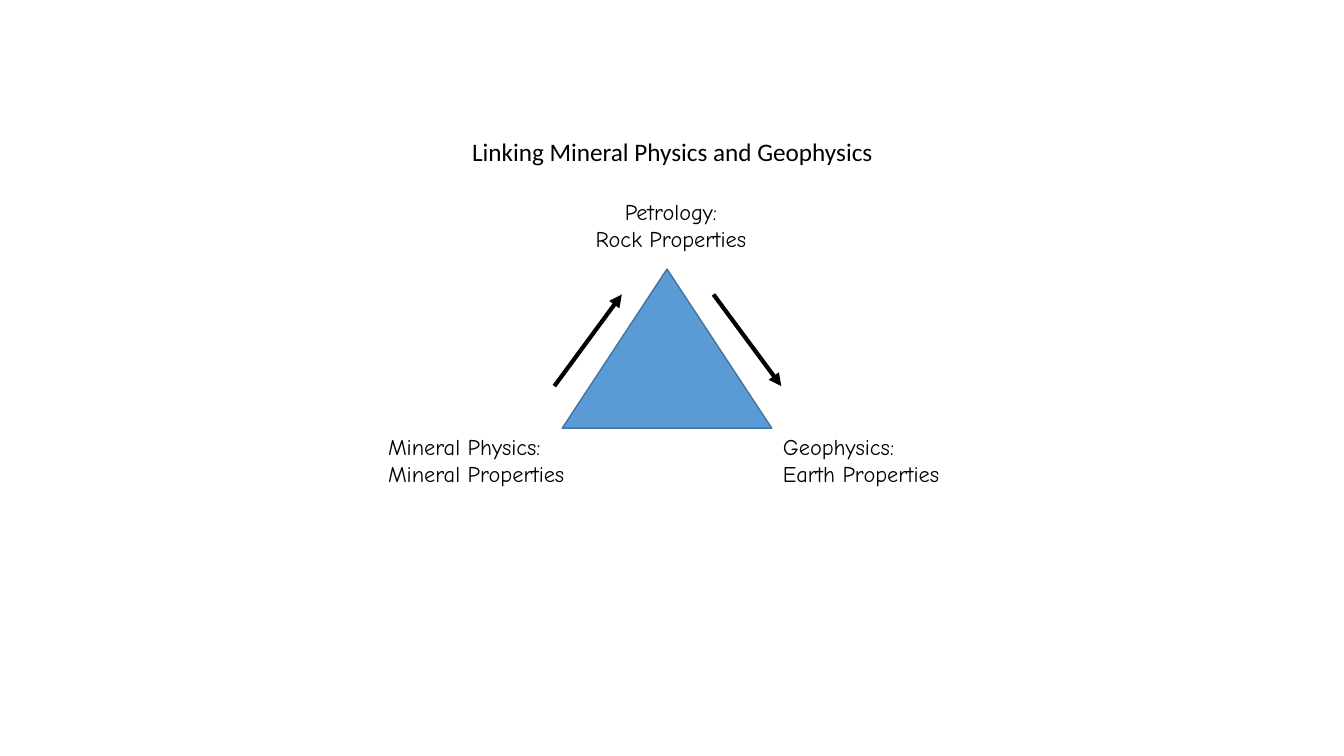
from dataclasses import dataclass

from lxml.etree import SubElement
from pptx import Presentation
from pptx.dml.color import RGBColor
from pptx.enum.shapes import MSO_CONNECTOR as Connector, MSO_SHAPE as Preset
from pptx.enum.text import MSO_ANCHOR as Anchor, MSO_AUTO_SIZE as AutoSize, PP_ALIGN as Align
from pptx.oxml.ns import qn
from pptx.slide import Slide
from pptx.util import Cm, Pt


@dataclass(frozen=True)
class Theme:
    ink: RGBColor = RGBColor(0x00, 0x00, 0x00)
    fill: RGBColor = RGBColor(0x5B, 0x9B, 0xD5)
    edge: RGBColor = RGBColor(0x43, 0x73, 0x9E)
    title_font: str = "Calibri"
    label_font: str = "Comic Neue"
    title_size: Pt = Pt(18)
    label_size: Pt = Pt(16)
    edge_width: Pt = Pt(1)
    arrow_width: Pt = Pt(3)


@dataclass(frozen=True)
class Label:
    lines: tuple[str, str]
    left: float
    top: float
    width: float
    align: Align = Align.LEFT


@dataclass(frozen=True)
class Arrow:
    start: tuple[float, float]
    end: tuple[float, float]


THEME = Theme()
LABEL_HEIGHT = 1.63
BASE_TOP = 10.8
ARROW_TOP, ARROW_BOTTOM = 7.42, 9.73

LABELS = (
    Label(("Mineral Physics:", "Mineral Properties"), 9.53, BASE_TOP, 5.46),
    Label(("Petrology:", "Rock Properties"), 14.55, 4.88, 4.72, Align.CENTER),
    Label(("Geophysics:", "Earth Properties"), 19.48, BASE_TOP, 4.98),
)
ARROWS = (
    Arrow((13.97, ARROW_BOTTOM), (15.67, ARROW_TOP)),
    Arrow((17.98, ARROW_TOP), (19.69, ARROW_BOTTOM)),
)


def set_title(page: Slide, text: str) -> None:
    title = page.shapes.title
    title.left, title.top, title.width, title.height = Cm(6.15), Cm(2.11), Cm(21.59), Cm(4.09)
    frame = title.text_frame
    frame.text = text
    frame.auto_size = AutoSize.NONE
    frame.vertical_anchor = Anchor.MIDDLE
    frame.margin_bottom = Cm(0.8)
    para = frame.paragraphs[0]
    para.alignment = Align.CENTER
    para.font.name = THEME.title_font
    para.font.size = THEME.title_size
    para.font.color.rgb = THEME.ink


def add_triangle(page: Slide) -> None:
    triangle = page.shapes.add_shape(
        Preset.ISOSCELES_TRIANGLE, Cm(14.17), Cm(6.78), Cm(5.28), Cm(4.01))
    triangle.shadow.inherit = False
    triangle.fill.solid()
    triangle.fill.fore_color.rgb = THEME.fill
    triangle.line.color.rgb = THEME.edge
    triangle.line.width = THEME.edge_width


def add_label(page: Slide, label: Label) -> None:
    box = page.shapes.add_textbox(
        Cm(label.left), Cm(label.top), Cm(label.width), Cm(LABEL_HEIGHT))
    frame = box.text_frame
    frame.text = "\n".join(label.lines)
    frame.word_wrap = False
    frame.auto_size = AutoSize.SHAPE_TO_FIT_TEXT
    for para in frame.paragraphs:
        para.alignment = label.align
        para.font.name = THEME.label_font
        para.font.size = THEME.label_size
        para.font.color.rgb = THEME.ink


def add_arrow(page: Slide, arrow: Arrow) -> None:
    connector = page.shapes.add_connector(
        Connector.STRAIGHT, *map(Cm, arrow.start), *map(Cm, arrow.end))
    connector.line.color.rgb = THEME.ink
    connector.line.width = THEME.arrow_width
    properties = connector._element.spPr
    SubElement(properties.find(qn("a:ln")), qn("a:tailEnd"), type="triangle")
    SubElement(properties, qn("a:effectLst"))


def main() -> None:
    deck = Presentation()
    deck.slide_width, deck.slide_height = Cm(33.87), Cm(19.05)
    page = deck.slides.add_slide(deck.slide_layouts.get_by_name("Title Only"))
    set_title(page, "Linking Mineral Physics and Geophysics")
    add_triangle(page)
    for label in LABELS:
        add_label(page, label)
    for arrow in ARROWS:
        add_arrow(page, arrow)
    deck.save("out.pptx")


if __name__ == "__main__":
    main()
